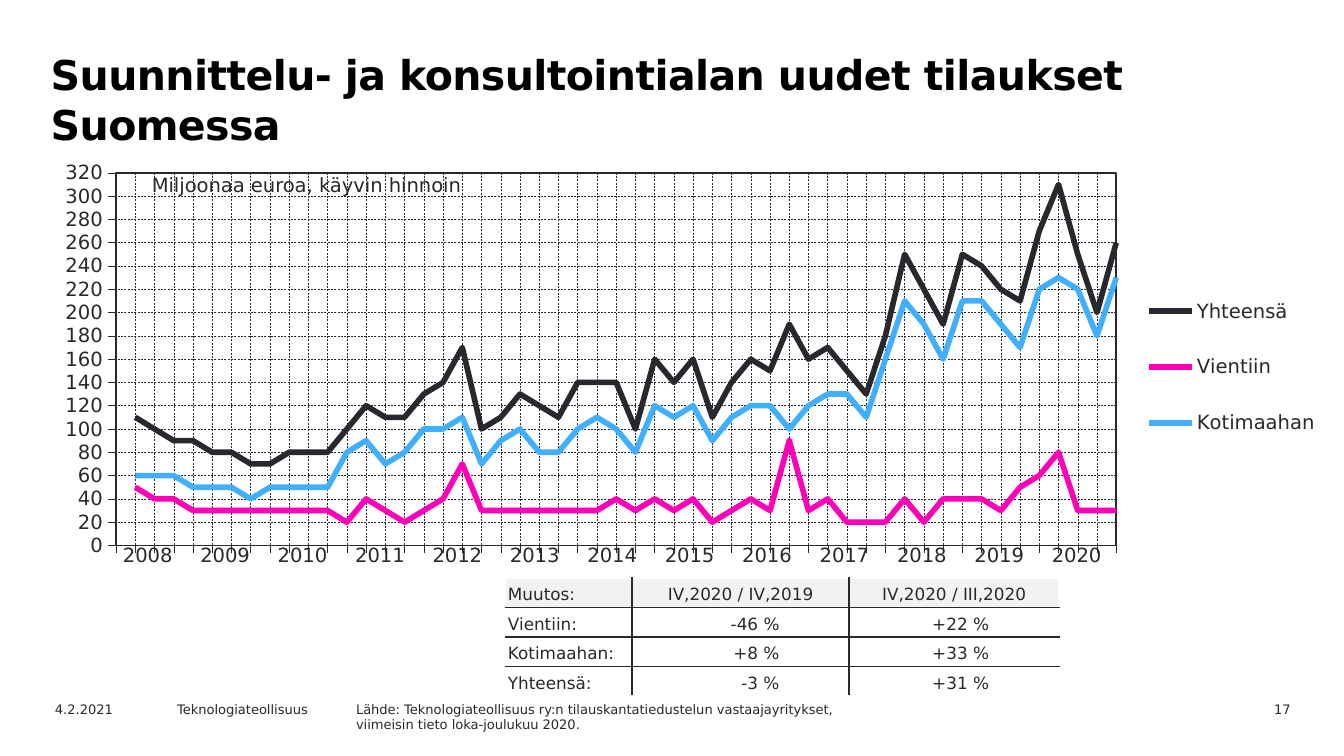
from lxml import etree
from pptx import Presentation
from pptx.chart.data import CategoryChartData
from pptx.dml.color import RGBColor
from pptx.enum.chart import XL_CHART_TYPE as ChartType, XL_LEGEND_POSITION as LegendPos
from pptx.enum.chart import XL_TICK_LABEL_POSITION as LabelPos, XL_TICK_MARK as Tick
from pptx.enum.dml import MSO_LINE_DASH_STYLE as Dash
from pptx.enum.text import MSO_ANCHOR as Anchor, PP_ALIGN as Align
from pptx.oxml import parse_xml
from pptx.oxml.ns import nsdecls, qn
from pptx.util import Cm, Pt

INK = RGBColor(0x29, 0x28, 0x2E)
BLACK = RGBColor(0, 0, 0)
WHITE = RGBColor(0xFF, 0xFF, 0xFF)
GREY = RGBColor(0xF2, 0xF2, 0xF2)
PINK = RGBColor(0xFF, 0x00, 0xB8)
BLUE = RGBColor(0x40, 0xAF, 0xFF)
FONT = "DejaVu Sans"
NO_STYLE = "{2D5ABB26-0587-4C30-8999-92F81FD0307C}"

SERIES = [
    ("Yhteensä", INK, [
        None, 110, 100, 90, 90, 80, 80, 70, 70, 80, 80, 80, 100, 120, 110, 110, 130, 140,
        170, 100, 110, 130, 120, 110, 140, 140, 140, 100, 160, 140, 160, 110, 140, 160, 150,
        190, 160, 170, 150, 130, 180, 250, 220, 190, 250, 240, 220, 210, 270, 310, 250, 200, 260]),
    ("Vientiin", PINK, [
        None, 50, 40, 40, 30, 30, 30, 30, 30, 30, 30, 30, 20, 40, 30, 20, 30, 40,
        70, 30, 30, 30, 30, 30, 30, 30, 40, 30, 40, 30, 40, 20, 30, 40, 30,
        90, 30, 40, 20, 20, 20, 40, 20, 40, 40, 40, 30, 50, 60, 80, 30, 30, 30]),
    ("Kotimaahan", BLUE, [
        None, 60, 60, 60, 50, 50, 50, 40, 50, 50, 50, 50, 80, 90, 70, 80, 100, 100,
        110, 70, 90, 100, 80, 80, 100, 110, 100, 80, 120, 110, 120, 90, 110, 120, 120,
        100, 120, 130, 130, 110, 160, 210, 190, 160, 210, 210, 190, 170, 220, 230, 220, 180, 230]),
]
CHANGES = [
    ("Muutos:", "IV,2020 / IV,2019", "IV,2020 / III,2020"),
    ("Vientiin:", "-46 %", "+22 %"),
    ("Kotimaahan:", "+8 %", "+33 %"),
    ("Yhteensä:", "-3 %", "+31 %"),
]


def add_run(p, text, size, color=INK, bold=False):
    r = p.add_run()
    r.text = text
    r.font.name, r.font.size, r.font.bold = FONT, Pt(size), bold
    r.font.color.rgb = color
    return r


def add_text(s, x, y, w, h, lines, size, align=Align.LEFT, wrap=True, color=INK, bold=False):
    tf = s.shapes.add_textbox(Cm(x), Cm(y), Cm(w), Cm(h)).text_frame
    tf.word_wrap = wrap
    for i, line in enumerate(lines):
        p = tf.add_paragraph() if i else tf.paragraphs[0]
        p.alignment = align
        add_run(p, line, size, color, bold)
    return tf


def add_title(s, x, y, w, h):
    title = "Suunnittelu- ja konsultointialan uudet tilaukset Suomessa"
    tf = add_text(s, x, y, w, h, [title], 22, color=BLACK, bold=True)
    p = tf.paragraphs[0]
    p.line_spacing = Pt(27)
    p.runs[0].font._element.set("spc", "-30")


def add_footer(s, x, y, w, h):
    source = ["Lähde: Teknologiateollisuus ry:n tilauskantatiedustelun vastaajayritykset,",
              "viimeisin tieto loka-joulukuu 2020."]
    add_text(s, x, y, 2.54, h, ["4.2.2021"], 7)
    add_text(s, x + 2.31, y, 3.6, h, ["Teknologiateollisuus"], 7)
    add_text(s, x + 5.69, y, 12.88, h, source, 7)
    add_text(s, x + w - 2.4, y, 2.4, h, ["17"], 7, Align.RIGHT)


def set_layout(parent, index, x, y, w, h, target=""):
    for old in parent.findall(qn("c:layout")):
        parent.remove(old)
    parts = [("xMode", "edge"), ("yMode", "edge"), ("x", x), ("y", y), ("w", w), ("h", h)]
    inner = target + "".join(f'<c:{tag} val="{val}"/>' for tag, val in parts)
    parent.insert(index, parse_xml(
        f'<c:layout {nsdecls("c")}><c:manualLayout>{inner}</c:manualLayout></c:layout>'))


def style_axis(axis):
    axis.major_tick_mark, axis.minor_tick_mark = Tick.OUTSIDE, Tick.NONE
    axis.format.line.color.rgb = INK
    axis.format.line.width = Pt(0.22)
    axis.has_major_gridlines = True
    grid = axis.major_gridlines.format.line
    grid.color.rgb, grid.width, grid.dash_style = INK, Pt(0.25), Dash.DASH


def style_font(font):
    font.name, font.size, font.bold = FONT, Pt(10.5), False
    font.color.rgb = INK


def add_orders_chart(s, x, y, w, h):
    data = CategoryChartData()
    data.categories = [str(i + 1) for i in range(len(SERIES[0][2]))]
    for name, _, values in SERIES:
        data.add_series(name, values)
    chart = s.shapes.add_chart(ChartType.LINE, Cm(x), Cm(y), Cm(w), Cm(h), data).chart
    chart.has_title = False
    style_font(chart.font)
    plot = chart.plots[0]
    plot.vary_by_categories = False
    for series, (_, color, _) in zip(plot.series, SERIES):
        series.smooth = False
        series.format.line.color.rgb = color
        series.format.line.width = Pt(3)

    # Axes
    cat, val = chart.category_axis, chart.value_axis
    style_axis(cat)
    style_axis(val)
    cat.tick_label_position = LabelPos.NONE
    val.minimum_scale, val.maximum_scale, val.major_unit = 0, 320, 20
    val.tick_labels.number_format = "#,##0"
    val.tick_labels.number_format_is_linked = False
    style_font(val.tick_labels.font)
    val._element.find(qn("c:majorUnit")).addprevious(
        parse_xml(f'<c:crossBetween {nsdecls("c")} val="midCat"/>'))

    # Legend
    chart.has_legend = True
    legend = chart.legend
    legend.position, legend.include_in_layout = LegendPos.RIGHT, False
    style_font(legend.font)
    set_layout(legend._element, 1, 0.85, 0.25, 0.15, 0.45)

    # Plot area position and frame
    area = chart._chartSpace.chart.plotArea
    set_layout(area, 0, 0.048, 0.041, 0.786, 0.833, '<c:layoutTarget val="inner"/>')
    area.append(parse_xml(
        f'<c:spPr {nsdecls("c", "a")}><a:noFill/><a:ln w="12700"><a:solidFill>'
        f'<a:srgbClr val="{INK}"/></a:solidFill></a:ln></c:spPr>'))

    # Unit and years laid over the chart
    add_text(s, x + 1.58, y + 0.23, 6.6, 0.69, ["Miljoonaa euroa, käyvin hinnoin"], 10.5, wrap=False)
    add_years(s, x + 1.02, y + 7.24, 19.02, 0.79)


def add_plain_table(s, x, y, w, h, rows, widths):
    table = s.shapes.add_table(rows, len(widths), Cm(x), Cm(y), Cm(w), Cm(h)).table
    table.first_row = table.horz_banding = False
    table._tbl.tblPr.find(qn("a:tableStyleId")).text = NO_STYLE
    for col, width in zip(table.columns, widths):
        col.width = Cm(width)
    for row in table.rows:
        row.height = Cm(h / rows)
    return table


def add_years(s, x, y, w, h):
    years = range(2008, 2021)
    table = add_plain_table(s, x, y, w, h, 1, [w / len(years)] * len(years))
    for cell, year in zip(table.rows[0].cells, years):
        cell.fill.background()
        p = cell.text_frame.paragraphs[0]
        p.alignment = Align.CENTER
        add_run(p, str(year), 10.5)


def set_borders(cell, colors):
    for i, (side, color) in enumerate(zip("LRTB", colors)):
        ln = etree.Element(qn(f"a:ln{side}"), w="12700")
        fill = etree.SubElement(ln, qn("a:solidFill"))
        etree.SubElement(fill, qn("a:srgbClr"), val=str(color))
        cell._tc.get_or_add_tcPr().insert(i, ln)


def add_change_table(s, x, y, w, h):
    last_row, last_col = len(CHANGES) - 1, len(CHANGES[0]) - 1
    table = add_plain_table(s, x, y, w, h, len(CHANGES), [2.39, 4.11, w - 6.5])
    for i, row in enumerate(CHANGES):
        for j, text in enumerate(row):
            cell = table.cell(i, j)
            number = i > 0 and j > 0
            cell.margin_left = cell.margin_top = cell.margin_bottom = Cm(0.05)
            cell.margin_right = Cm(1.32 if number else 0.05)
            cell.vertical_anchor = Anchor.BOTTOM
            if i == 0:
                cell.fill.solid()
                cell.fill.fore_color.rgb = GREY
            else:
                cell.fill.background()
            # Outer edges white, inner rules dark
            outer = (j == 0, j == last_col, i == 0, i == last_row)
            set_borders(cell, [WHITE if edge else INK for edge in outer])
            p = cell.text_frame.paragraphs[0]
            p.alignment = Align.RIGHT if number else Align.CENTER if j else Align.LEFT
            add_run(p, text, 9)


def main():
    prs = Presentation()
    prs.slide_width, prs.slide_height = Cm(25.4), Cm(14.29)
    s = prs.slides.add_slide(prs.slide_layouts[6])
    add_title(s, 0.71, 0.79, 22.2, 1.8)
    add_footer(s, 0.79, 13.13, 23.85, 0.46)
    add_orders_chart(s, 1.04, 2.92, 24.05, 8.46)
    add_change_table(s, 9.55, 10.92, 10.46, 2.24)
    prs.save("out.pptx")


if __name__ == "__main__":
    main()
